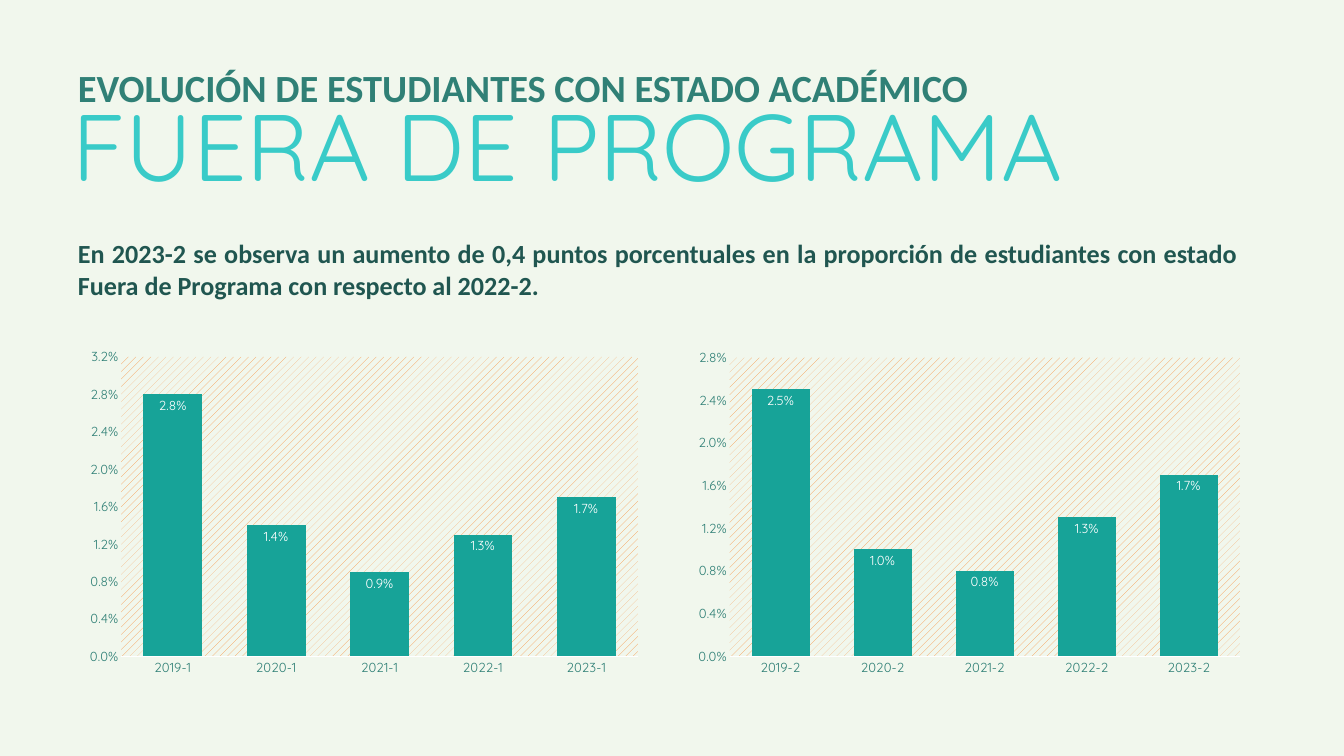
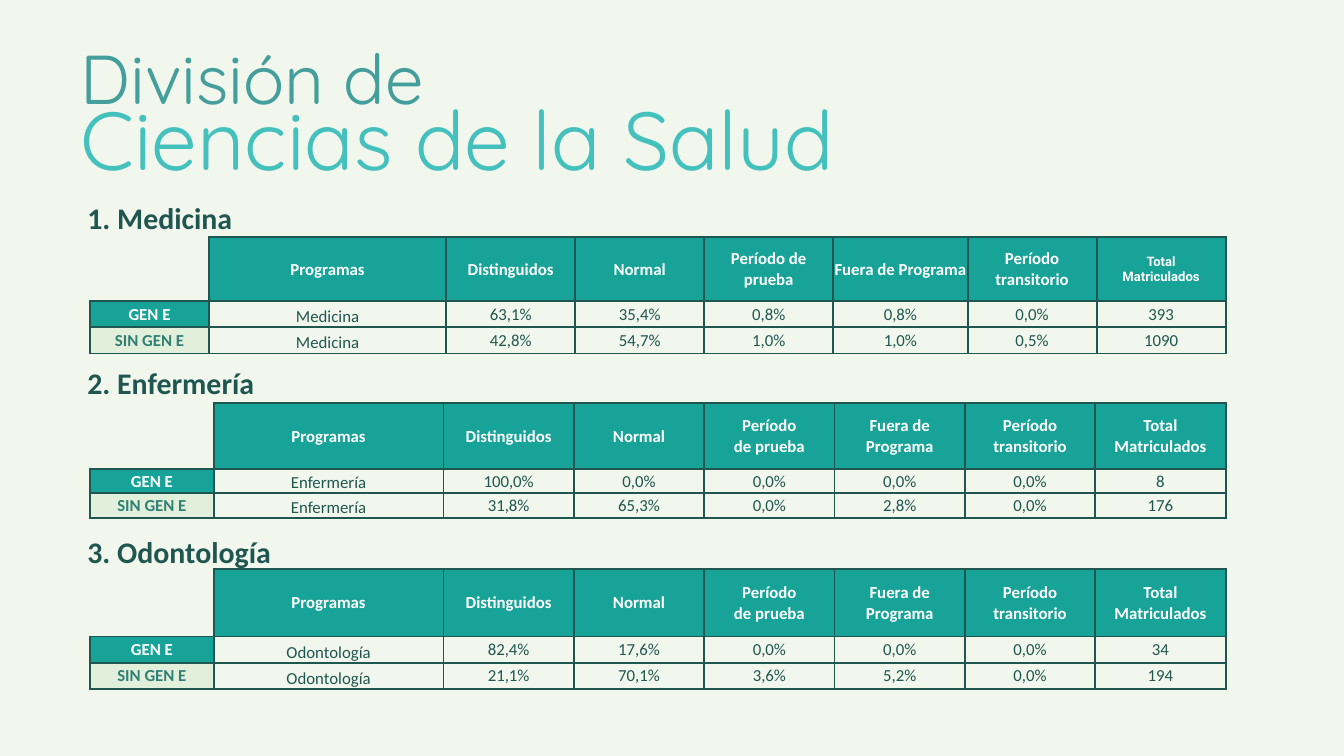
"""Build two slides on student academic status: charts and programme tables."""
from dataclasses import dataclass
from typing import NamedTuple

from lxml.etree import SubElement
from pptx import Presentation
from pptx.chart.data import CategoryChartData
from pptx.dml.color import RGBColor
from pptx.enum.chart import XL_CHART_TYPE as ChartType
from pptx.enum.chart import XL_LABEL_POSITION as LabelPosition
from pptx.enum.chart import XL_TICK_MARK as TickMark
from pptx.enum.text import MSO_ANCHOR as Anchor
from pptx.enum.text import MSO_AUTO_SIZE as AutoSize
from pptx.enum.text import PP_ALIGN as Align
from pptx.oxml import parse_xml
from pptx.oxml.ns import nsdecls, qn
from pptx.util import Inches, Pt

WIDTH, HEIGHT = Inches(20), Inches(11.25)
PAPER, TEAL, DARK, MID = "F1F7ED", "17A398", "205650", "308076"
MINT, WHITE, ORANGE = "E2EFDA", "FFFFFF", "F79646"
BODY_FONT, TITLE_FONT, SMALL_FONT = "Calibri", "Quicksand", "Roboto"


class Area(NamedTuple):
    left: float
    top: float
    width: float
    height: float


@dataclass(frozen=True)
class Style:
    size: float
    color: str
    font: str = BODY_FONT
    bold: bool = False
    align: Align = Align.LEFT
    leading: float | None = None


@dataclass(frozen=True)
class TextItem:
    text: str
    area: Area
    style: Style


@dataclass(frozen=True)
class Semester:
    number: int
    area: Area
    plot: Area
    values: tuple
    top_value: float


@dataclass(frozen=True)
class Programme:
    name: str
    heading_area: Area
    top: float
    columns: tuple
    rows: tuple
    trial: str
    total_style: Style
    gen_e: str
    without_gen_e: str


HEADING = Style(32, DARK, bold=True, leading=32.7)
CELL = Style(18, DARK, align=Align.CENTER)
CELL_HEAD = Style(18, WHITE, bold=True, align=Align.CENTER)
CELL_LABEL = Style(18, MID, bold=True, align=Align.CENTER)
CELL_SMALL = Style(14, WHITE, SMALL_FONT, True, Align.CENTER)
WIDE_COLUMNS = (8.85, 17.65, 9.6, 9.6, 9.6, 10, 9.6, 9.6)
EVEN_COLUMNS = (9.2, 17.1) + (9.7,) * 6

EVOLUTION_TITLE = TextItem(
    "FUERA DE PROGRAMA", Area(5.4, 17.55, 87.9, 9.51),
    Style(101, "39CBC8", TITLE_FONT, leading=72))
EVOLUTION_KICKER = TextItem(
    "EVOLUCIÓN DE ESTUDIANTES CON ESTADO ACADÉMICO",
    Area(5.8, 8.44, 67.85, 6.04), Style(41.2, MID, bold=True, leading=49.9))
EVOLUTION_FINDING = TextItem(
    "En 2023-2 se observa un aumento de 0,4 puntos porcentuales en la "
    "proporción de estudiantes con estado Fuera de Programa con respecto al 2022-2.",
    Area(5.8, 31.38, 86.25, 8.36),
    Style(28, DARK, bold=True, align=Align.JUSTIFY, leading=33.9))
DIVISION_KICKER = TextItem(
    "División de", Area(6, 4.71, 29.8, 11.2), Style(74, "449E9C", TITLE_FONT))
DIVISION_TITLE = TextItem(
    "Ciencias de la Salud", Area(6, 11.64, 77.3, 13.16),
    Style(88, "44C0BD", TITLE_FONT))

SEMESTERS = (
    Semester(1, Area(3.75, 42.13, 45.4, 50.13), Area(0.116, 0.101, 0.847, 0.791),
             (0.028, 0.014, 0.009, 0.013, 0.017), 0.032),
    Semester(2, Area(49.15, 42.13, 46.25, 50.13), Area(0.111, 0.103, 0.821, 0.788),
             (0.025, 0.010, 0.008, 0.013, 0.017), 0.028),
)
PROGRAMMES = (
    Programme("Medicina", Area(6.5, 27.1, 33.5, 4.09), 31.38, WIDE_COLUMNS,
              (3.02, 3.02, 3.47, 3.47), "Período de prueba", CELL_SMALL,
              "63,1% 35,4% 0,8% 0,8% 0,0% 393", "42,8% 54,7% 1,0% 1,0% 0,5% 1090"),
    Programme("Enfermería", Area(6.5, 48.98, 31, 4.18), 53.33, EVEN_COLUMNS,
              (3.25,) * 4, "Período\nde prueba", CELL_HEAD,
              "100,0% 0,0% 0,0% 0,0% 0,0% 8", "31,8% 65,3% 0,0% 2,8% 0,0% 176"),
    Programme("Odontología", Area(6.5, 71.29, 24.35, 4.09), 75.29, EVEN_COLUMNS,
              (3.47,) * 4, "Período\nde prueba", CELL_HEAD,
              "82,4% 17,6% 0,0% 0,0% 0,0% 34", "21,1% 70,1% 3,6% 5,2% 0,0% 194"),
)


def across(columns: float) -> int:
    """Turn hundredths of the slide width into a length."""
    return round(WIDTH * columns / 100)


def down(rows: float) -> int:
    """Turn hundredths of the slide height into a length."""
    return round(HEIGHT * rows / 100)


def place(area: Area) -> tuple:
    """Give left, top, width and height of an area."""
    return across(area.left), down(area.top), across(area.width), down(area.height)


def paint(target, color: str) -> None:
    """Fill a target solidly with a hex colour."""
    target.solid()
    target.fore_color.rgb = RGBColor.from_string(color)


def set_font(font, style: Style) -> None:
    """Apply typeface, size, weight and colour."""
    font.name, font.size, font.bold = style.font, Pt(style.size), style.bold
    paint(font.fill, style.color)


def write(frame, text: str, style: Style) -> None:
    """Set the text of a frame and format its paragraphs and runs."""
    frame.text = text
    for para in frame.paragraphs:
        para.alignment = style.align
        para.space_before = Pt(0)
        if style.leading:
            para.line_spacing = Pt(style.leading)
        for span in para.runs:
            set_font(span.font, style)


def put_text(box, item: TextItem) -> None:
    """Place a text shape without insets and write its item."""
    box.left, box.top, box.width, box.height = place(item.area)
    frame = box.text_frame
    frame.word_wrap, frame.auto_size = True, AutoSize.SHAPE_TO_FIT_TEXT
    frame.vertical_anchor = Anchor.TOP
    frame.margin_left = frame.margin_right = 0
    frame.margin_top = frame.margin_bottom = 0
    write(frame, item.text, item.style)


def add_text(page, item: TextItem) -> None:
    """Add a text box for an item."""
    put_text(page.shapes.add_textbox(*place(item.area)), item)


def remove_bullet(para) -> None:
    """Take bullet and indent away from a body paragraph."""
    properties = para._p.get_or_add_pPr()
    properties.set("marL", "0")
    properties.set("indent", "0")
    SubElement(properties, qn("a:buNone"))


def style_plot(chart, plot: Area) -> None:
    """Fix the inner plot area and give it a dotted pattern."""
    space = chart.element
    body = space.find(qn("c:chart"))
    body.addnext(parse_xml(
        f'<c:spPr {nsdecls("c", "a")}><a:noFill/><a:ln><a:noFill/></a:ln></c:spPr>'))
    plot_area = body.find(qn("c:plotArea"))
    for old in plot_area.findall(qn("c:layout")):
        plot_area.remove(old)
    settings = [("layoutTarget", "inner"), ("xMode", "edge"), ("yMode", "edge"),
                *zip("xywh", plot)]
    layout = "".join(f'<c:{name} val="{value}"/>' for name, value in settings)
    plot_area.insert(0, parse_xml(
        f'<c:layout {nsdecls("c")}><c:manualLayout>{layout}</c:manualLayout></c:layout>'))
    plot_area.append(parse_xml(
        f'<c:spPr {nsdecls("c", "a")}><a:pattFill prst="pct10">'
        f'<a:fgClr><a:srgbClr val="{ORANGE}"/></a:fgClr>'
        f'<a:bgClr><a:srgbClr val="{PAPER}"/></a:bgClr></a:pattFill></c:spPr>'))


def add_semester_chart(page, semester: Semester) -> None:
    """Add the column chart of one semester over the years."""
    data = CategoryChartData(number_format="0.0%")
    data.categories = [f"{year}-{semester.number}" for year in range(2019, 2024)]
    data.add_series("Series 1", semester.values)
    chart = page.shapes.add_chart(
        ChartType.COLUMN_CLUSTERED, *place(semester.area), data).chart
    chart.has_legend = chart.has_title = False
    set_font(chart.font, Style(10, ORANGE))
    for axis in (chart.category_axis, chart.value_axis):
        axis.major_tick_mark = axis.minor_tick_mark = TickMark.NONE
        axis.has_major_gridlines = False
        set_font(axis.tick_labels.font, Style(14, MID, TITLE_FONT))
    paint(chart.category_axis.format.line.fill, WHITE)
    chart.category_axis.format.line.width = Pt(0.75)
    scale = chart.value_axis
    scale.format.line.fill.background()
    scale.minimum_scale, scale.maximum_scale = 0, semester.top_value
    scale.major_unit = 0.004
    scale.tick_labels.number_format = "0.0%"
    scale.tick_labels.number_format_is_linked = False
    bars = chart.plots[0]
    bars.gap_width, bars.vary_by_categories = 76, False
    paint(bars.series[0].format.fill, TEAL)
    labels = bars.series[0].data_labels
    labels.show_value, labels.position = True, LabelPosition.INSIDE_END
    labels.number_format, labels.number_format_is_linked = "0.0%", False
    set_font(labels.font, Style(14, WHITE, TITLE_FONT))
    style_plot(chart, semester.plot)


def set_borders(cell, sides: str) -> None:
    """Draw the named sides of a cell and hide the others."""
    properties = cell._tc.get_or_add_tcPr()
    for index, side in enumerate("LRTB"):
        fill = (f'<a:solidFill><a:srgbClr val="{DARK}"/></a:solidFill>'
                if side in sides else "<a:noFill/>")
        properties.insert(index, parse_xml(
            f'<a:ln{side} {nsdecls("a")} w="{Pt(2.25)}">{fill}</a:ln{side}>'))


def fill_cell(cell, text: str, style: Style, color: str,
              anchor: Anchor = Anchor.MIDDLE) -> None:
    """Write, colour and border one table cell."""
    cell.vertical_anchor = anchor
    write(cell.text_frame, text, style)
    paint(cell.fill, color)
    set_borders(cell, "LRTB")


def add_programme_table(page, programme: Programme) -> None:
    """Add the table of one programme with its two student groups."""
    area = Area(6.7, programme.top, sum(programme.columns), sum(programme.rows))
    table = page.shapes.add_table(4, 8, *place(area)).table
    table.first_row = table.horz_banding = False
    for column, width in zip(table.columns, programme.columns):
        column.width = across(width)
    for row, height in zip(table.rows, programme.rows):
        row.height = down(height)
    for cell in table.iter_cells():
        cell.margin_left = cell.margin_right = cell.margin_top = Inches(0.01)
        cell.margin_bottom = 0
    for row, sides in enumerate(("R", "RB")):
        table.cell(row, 0).fill.background()
        set_borders(table.cell(row, 0), sides)
    headers = ("Programas", "Distinguidos", "Normal", programme.trial,
               "Fuera de Programa", "Período transitorio", "Total\vMatriculados")
    for column, header in enumerate(headers, 1):
        style = programme.total_style if column == len(headers) else CELL_HEAD
        table.cell(0, column).merge(table.cell(1, column))
        fill_cell(table.cell(0, column), header, style, TEAL)
        set_borders(table.cell(1, column), "LRB")
    groups = (("GEN E", CELL_HEAD, TEAL, programme.gen_e),
              ("SIN GEN E", CELL_LABEL, MINT, programme.without_gen_e))
    for row, (label, style, color, figures) in enumerate(groups, 2):
        fill_cell(table.cell(row, 0), label, style, color)
        fill_cell(table.cell(row, 1), programme.name, CELL, PAPER, Anchor.BOTTOM)
        for column, figure in enumerate(figures.split(), 2):
            fill_cell(table.cell(row, column), figure, CELL, PAPER)


def build_evolution(deck) -> None:
    """Build the slide with the two semester charts."""
    page = deck.slides.add_slide(deck.slide_layouts[1])
    put_text(page.shapes.title, EVOLUTION_TITLE)
    finding = page.placeholders[1]
    put_text(finding, EVOLUTION_FINDING)
    remove_bullet(finding.text_frame.paragraphs[0])
    add_text(page, EVOLUTION_KICKER)
    for semester in SEMESTERS:
        add_semester_chart(page, semester)


def build_division(deck) -> None:
    """Build the slide with one table for each programme."""
    page = deck.slides.add_slide(deck.slide_layouts[5])
    put_text(page.shapes.title, DIVISION_TITLE)
    add_text(page, DIVISION_KICKER)
    for number, programme in enumerate(PROGRAMMES, 1):
        heading = f"{number}. {programme.name}"
        add_text(page, TextItem(heading, programme.heading_area, HEADING))
        add_programme_table(page, programme)


def main() -> None:
    """Build and save the deck."""
    deck = Presentation()
    deck.slide_width, deck.slide_height = WIDTH, HEIGHT
    paint(deck.slide_master.background.fill, PAPER)
    build_evolution(deck)
    build_division(deck)
    deck.save("out.pptx")


if __name__ == "__main__":
    main()
